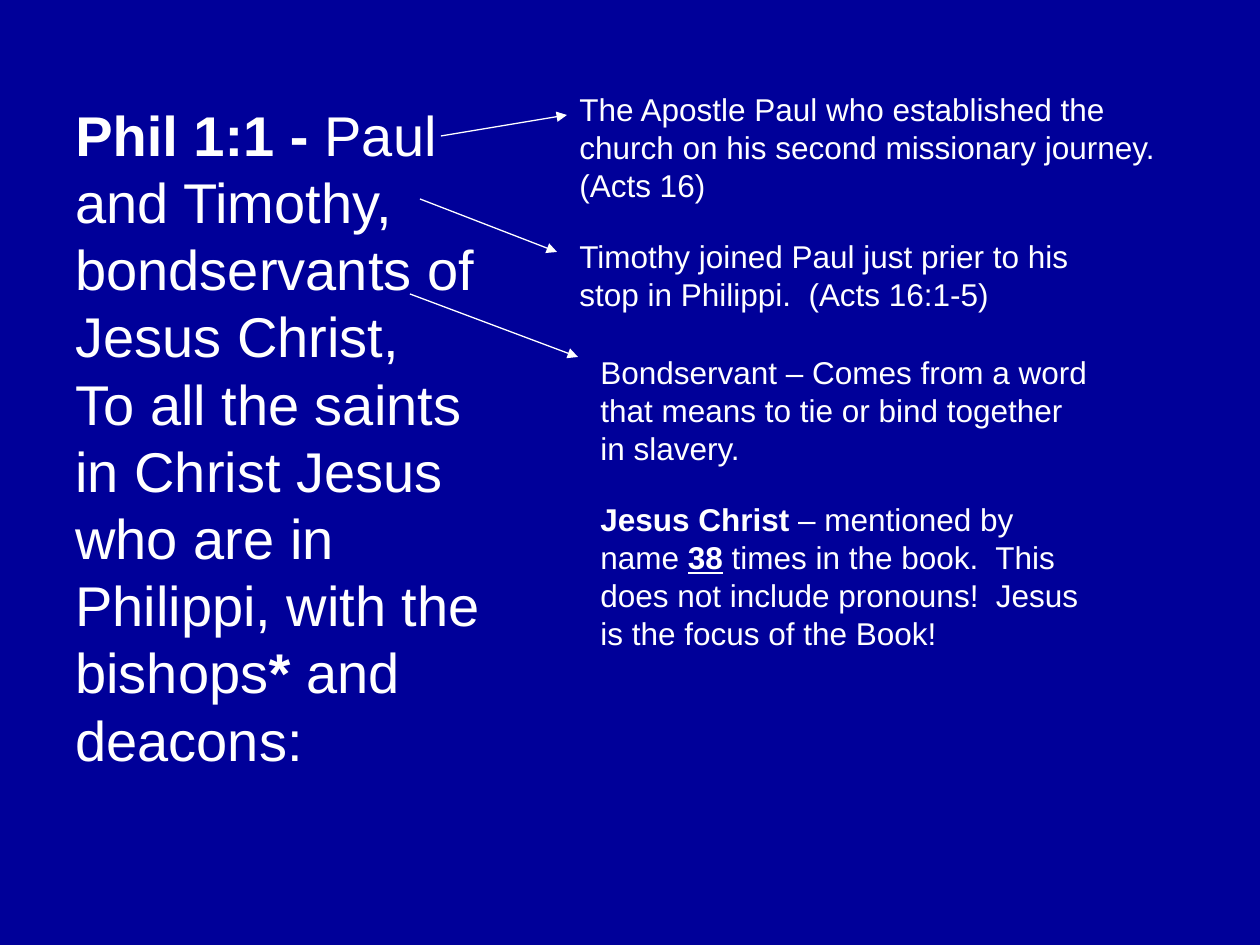
from dataclasses import dataclass

from lxml import etree
from pptx import Presentation
from pptx import util as u
from pptx.dml.color import RGBColor
from pptx.enum import shapes, text
from pptx.oxml.ns import qn

SCALE = 914400 // 126


@dataclass(frozen=True)
class Theme:
    back: RGBColor = RGBColor(0x00, 0x00, 0x99)
    ink: RGBColor = RGBColor(0xFF, 0xFF, 0xFF)
    font: str = "Arial"
    verse: int = 32
    note: int = 18
    line: float = 0.75


THEME = Theme()

VERSE = [
    [("Phil 1:1 - ", "b"), "Paul and Timothy, bondservants of Jesus Christ,"],
    ["To all the saints in Christ Jesus who are in Philippi, with the bishops",
     ("* ", "b"), "and deacons:"],
]

# Left, top, width, height and runs of each note
NOTES = [
    (567, 84, 620, 126, ["The Apostle Paul who established the church on his "
                         "second missionary journey. (Acts 16)"]),
    (567, 231, 567, 88, ["Timothy joined Paul just prier to his stop in "
                         "Philippi.  (Acts 16:1-5)"]),
    (588, 347, 514, 126, ["Bondservant – Comes from a word that means to tie "
                          "or bind together in slavery."]),
    (588, 494, 525, 164, [("Jesus Christ", "b"), " – mentioned by name ",
                          ("38", "bu"),
                          " times in the book.  This does not include "
                          "pronouns!  Jesus is the focus of the Book!"]),
]

# Start and end of each arrow, from a word to its note
ARROWS = [
    (441, 136, 567, 115),
    (420, 199, 557, 252),
    (410, 294, 578, 357),
]


def px(*vals):
    return [u.Emu(v * SCALE) for v in vals]


def add_text(slide, box, paras, size):
    """Add a text box; a run is a string or a pair of string and b/u marks."""
    frame = slide.shapes.add_textbox(*px(*box)).text_frame
    frame.word_wrap = True
    frame.auto_size = text.MSO_AUTO_SIZE.SHAPE_TO_FIT_TEXT
    for i, runs in enumerate(paras):
        para = frame.add_paragraph() if i else frame.paragraphs[0]
        for item in runs:
            words, marks = (item, "") if isinstance(item, str) else item
            run = para.add_run()
            run.text = words
            font = run.font
            font.name, font.size = THEME.font, u.Pt(size)
            font.color.rgb = THEME.ink
            font.bold = "b" in marks
            font.underline = "u" in marks


def add_arrow(slide, ends):
    arrow = slide.shapes.add_connector(shapes.MSO_CONNECTOR.STRAIGHT, *px(*ends))
    arrow.line.color.rgb = THEME.ink
    arrow.line.width = u.Pt(THEME.line)
    etree.SubElement(arrow.line._get_or_add_ln(), qn("a:tailEnd"), type="triangle")
    etree.SubElement(arrow._element.spPr, qn("a:effectLst"))


def main():
    deck = Presentation()
    deck.slide_width, deck.slide_height = px(1260, 945)
    slide = deck.slides.add_slide(deck.slide_layouts[6])
    fill = slide.background.fill
    fill.solid()
    fill.fore_color.rgb = THEME.back

    add_text(slide, (63, 94, 451, 684), VERSE, THEME.verse)
    for *box, runs in NOTES:
        add_text(slide, box, [runs], THEME.note)
    for ends in ARROWS:
        add_arrow(slide, ends)
    deck.save("out.pptx")


if __name__ == "__main__":
    main()
